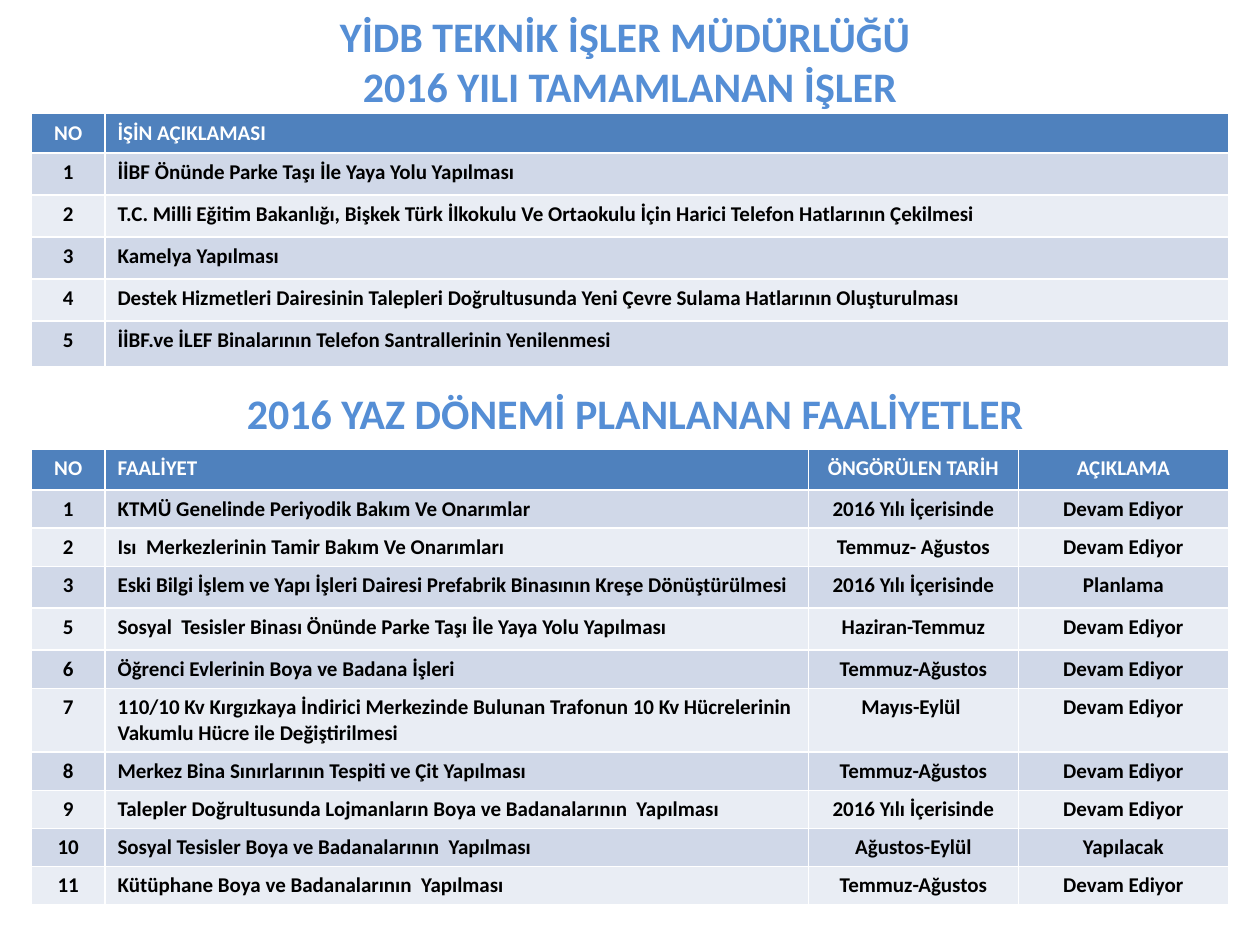
from pptx import Presentation
from pptx.dml.color import RGBColor
from pptx.enum import text
from pptx.util import Pt

LEFT, CENTER = text.PP_ALIGN.LEFT, text.PP_ALIGN.CENTER
TOP, MIDDLE = text.MSO_ANCHOR.TOP, text.MSO_ANCHOR.MIDDLE
HEADER_FILL, BAND_FILLS = "4F81BD", ("E9EDF4", "D0D8E8")

COMPLETED = [
    ("NO", "İŞİN AÇIKLAMASI"),
    ("1", "İİBF Önünde Parke Taşı İle Yaya Yolu Yapılması"),
    ("2", "T.C. Milli Eğitim Bakanlığı, Bişkek Türk İlkokulu Ve Ortaokulu İçin Harici Telefon Hatlarının Çekilmesi"),
    ("3", "Kamelya Yapılması"),
    ("4", "Destek Hizmetleri Dairesinin Talepleri Doğrultusunda Yeni Çevre Sulama Hatlarının Oluşturulması"),
    ("5", "İİBF.ve İLEF Binalarının Telefon Santrallerinin Yenilenmesi"),
]
PLANNED = [
    ("NO", "FAALİYET", "ÖNGÖRÜLEN TARİH", "AÇIKLAMA"),
    ("1", "KTMÜ Genelinde Periyodik Bakım Ve Onarımlar", "2016 Yılı İçerisinde", "Devam Ediyor"),
    ("2", "Isı  Merkezlerinin Tamir Bakım Ve Onarımları", "Temmuz- Ağustos", "Devam Ediyor"),
    ("3", "Eski Bilgi İşlem ve Yapı İşleri Dairesi Prefabrik Binasının Kreşe Dönüştürülmesi",
     "2016 Yılı İçerisinde", "Planlama"),
    ("5", "Sosyal  Tesisler Binası Önünde Parke Taşı İle Yaya Yolu Yapılması", "Haziran-Temmuz", "Devam Ediyor"),
    ("6", "Öğrenci Evlerinin Boya ve Badana İşleri", "Temmuz-Ağustos", "Devam Ediyor"),
    ("7", "110/10 Kv Kırgızkaya İndirici Merkezinde Bulunan Trafonun 10 Kv Hücrelerinin Vakumlu Hücre ile Değiştirilmesi",
     "Mayıs-Eylül ", "Devam Ediyor"),
    ("8", "Merkez Bina Sınırlarının Tespiti ve Çit Yapılması", "Temmuz-Ağustos", "Devam Ediyor"),
    ("9", "Talepler Doğrultusunda Lojmanların Boya ve Badanalarının  Yapılması",
     "2016 Yılı İçerisinde", "Devam Ediyor"),
    ("10", "Sosyal Tesisler Boya ve Badanalarının  Yapılması", "Ağustos-Eylül", "Yapılacak"),
    ("11", "Kütüphane Boya ve Badanalarının  Yapılması", "Temmuz-Ağustos", "Devam Ediyor"),
]


def color(hex_code):
    return RGBColor.from_string(hex_code)


def style(paragraph, size, hex_code, align):
    paragraph.alignment = align
    font = paragraph.font
    font.name, font.size, font.bold = "Calibri", Pt(size), True
    font.color.rgb = color(hex_code)


def add_heading(slide, box, wording):
    frame = slide.shapes.add_textbox(*map(Pt, box)).text_frame
    frame.word_wrap = True
    frame.vertical_anchor = text.MSO_ANCHOR.BOTTOM
    frame.margin_top, frame.margin_bottom = 0, Pt(2)
    frame.text = wording
    style(frame.paragraphs[0], 24, "558ED5", CENTER)


def add_work_table(slide, box, rows, widths, heights, header_anchor):
    table = slide.shapes.add_table(len(rows), len(widths), *map(Pt, box)).table
    for column, width in zip(table.columns, widths):
        column.width = Pt(width)
    for r, (entries, height) in enumerate(zip(rows, heights)):
        table.rows[r].height = Pt(height)
        for c, entry in enumerate(entries):
            cell = table.cell(r, c)
            cell.text = entry
            cell.vertical_anchor = TOP if r else header_anchor
            cell.fill.solid()
            cell.fill.fore_color.rgb = color(BAND_FILLS[r % 2] if r else HEADER_FILL)
            style(cell.text_frame.paragraphs[0], 12, "000000" if r else "FFFFFF",
                  LEFT if c == 1 else CENTER)


def main():
    deck = Presentation()
    deck.slide_width, deck.slide_height = Pt(720), Pt(540)
    slide = deck.slides.add_slide(deck.slide_layouts[6])

    add_heading(slide, (36, 221.8, 654, 30.2), "2016 YAZ DÖNEMİ PLANLANAN FAALİYETLER")
    add_work_table(slide, (18, 257, 684, 258), PLANNED, (42, 402, 120, 120),
                   (23, 21.8, 21.8, 24, 24, 21.8, 36.5, 21.8, 21.8, 21.8, 21.8), TOP)
    add_work_table(slide, (18, 65, 684, 145), COMPLETED, (42, 642),
                   (22.4, 24, 24, 24, 24, 26.4), MIDDLE)
    add_heading(slide, (33, 5.8, 654, 59.8), "YİDB TEKNİK İŞLER MÜDÜRLÜĞÜ \v2016 YILI TAMAMLANAN İŞLER")

    deck.save("out.pptx")


if __name__ == "__main__":
    main()
